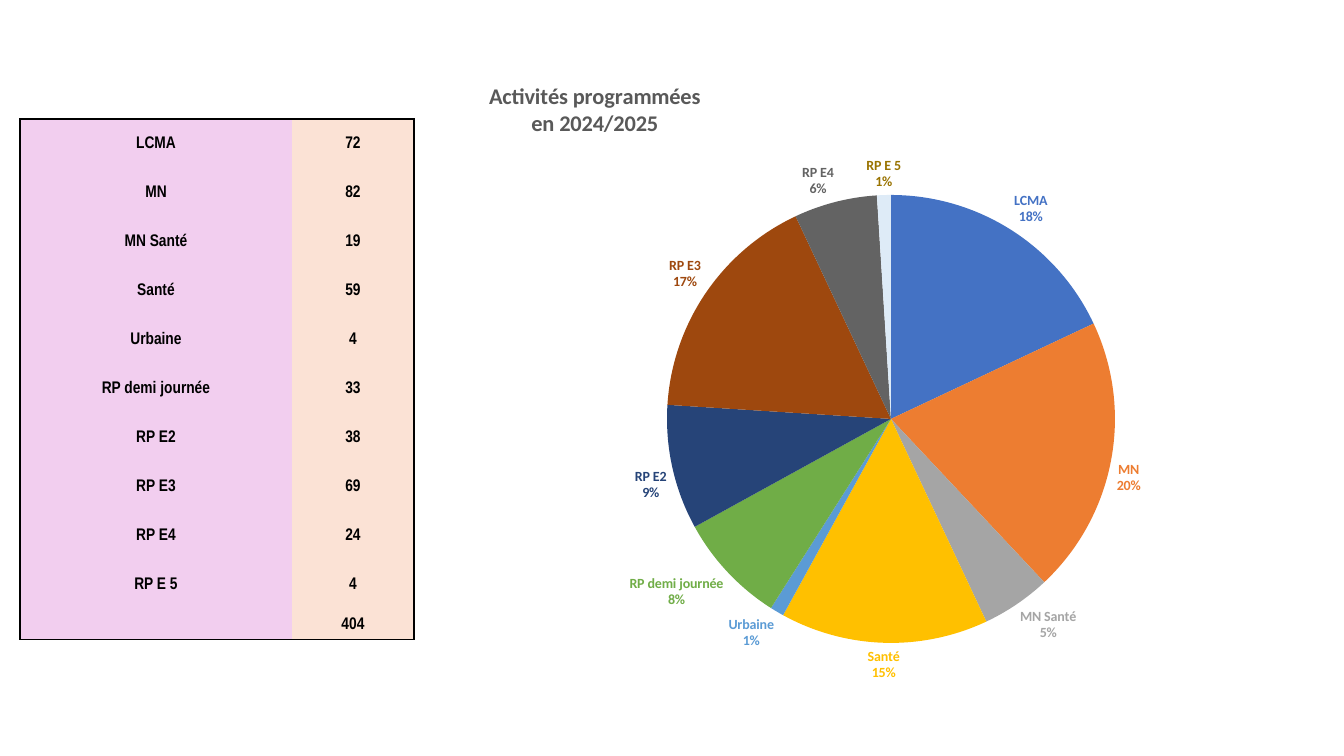
from lxml.etree import SubElement
from pptx import Presentation
from pptx.chart.data import CategoryChartData
from pptx.dml.color import RGBColor
from pptx.enum.chart import XL_CHART_TYPE, XL_LABEL_POSITION
from pptx.enum.text import MSO_ANCHOR, PP_ALIGN
from pptx.oxml import parse_xml
from pptx.oxml.ns import nsdecls, qn
from pptx.util import Emu, Pt

# Content: activity, sessions, share in percent, slice colour, label colour
ACTIVITIES = [
    ("LCMA", 72, 18, "4472C4", "4472C4"),
    ("MN", 82, 20, "ED7D31", "ED7D31"),
    ("MN Santé", 19, 5, "A5A5A5", "A5A5A5"),
    ("Santé", 59, 15, "FFC000", "FFC000"),
    ("Urbaine", 4, 1, "5B9BD5", "5B9BD5"),
    ("RP demi journée", 33, 8, "70AD47", "70AD47"),
    ("RP E2", 38, 9, "264478", "264478"),
    ("RP E3", 69, 17, "9E480E", "9E480E"),
    ("RP E4", 24, 6, "636363", "636363"),
    ("RP E 5", 4, 1, "DEEBF7", "997300"),
]
CHART_TITLE = ["Activités programmées", "en 2024/2025"]
TABLE_ROWS = [(name, str(count)) for name, count, *_ in ACTIVITIES]
TABLE_ROWS.append(("", str(sum(count for _, count, *_ in ACTIVITIES))))

THEME = {
    "column_fills": ["F2CEEF", "FBE2D5"],
    "border": "000000",
    "cell": {"name": "Arial Narrow", "size": Pt(12), "bold": True, "color": "000000"},
    "title": {"name": "Calibri", "size": Pt(16), "bold": True, "color": "595959"},
    "chart": {"name": "Calibri", "size": Pt(10), "color": "000000"},
    "label": {"name": "Calibri", "size": Pt(10), "bold": True},
}

# Geometry in px
SLIDE = (1344, 756)
TABLE = (20, 119)
COLUMN_WIDTHS = (272, 122)
ROW_HEIGHT, TOTAL_HEIGHT = 49, 31
CHART = (468, 61, 812, 633)
PIE = (667, 195, 448, 448)
TITLE = (486, 78)


def px(length):
    return Emu(round(length * 914400 / 100.8))


def style_font(font, values):
    for key, value in values.items():
        if key == "color":
            font.color.rgb = RGBColor.from_string(value)
        else:
            setattr(font, key, value)


def set_borders(cell, drawn_sides):
    properties = cell._tc.get_or_add_tcPr()
    for side in "LRTB":
        line = SubElement(properties, qn(f"a:ln{side}"), w=str(Pt(1)))
        if side in drawn_sides:
            fill = SubElement(line, qn("a:solidFill"))
            SubElement(fill, qn("a:srgbClr"), val=THEME["border"])
        else:
            SubElement(line, qn("a:noFill"))


def manual_layout(left, top, size=None, inner=False):
    """Turn a place on the slide into fractions of the chart area."""
    values = {"xMode": "edge", "yMode": "edge",
              "x": round((left - CHART[0]) / CHART[2], 4),
              "y": round((top - CHART[1]) / CHART[3], 4)}
    if inner:
        values = {"layoutTarget": "inner", **values}
    if size:
        values.update(w=round(size[0] / CHART[2], 4), h=round(size[1] / CHART[3], 4))
    body = "".join(f'<c:{key} val="{value}"/>' for key, value in values.items())
    return parse_xml(f'<c:layout {nsdecls("c")}><c:manualLayout>{body}'
                     "</c:manualLayout></c:layout>")


def add_activity_table(slide):
    heights = [ROW_HEIGHT] * len(ACTIVITIES) + [TOTAL_HEIGHT]
    frame = slide.shapes.add_table(len(TABLE_ROWS), 2, *map(px, TABLE),
                                   px(sum(COLUMN_WIDTHS)), px(sum(heights)))
    table = frame.table
    table.first_row = table.horz_banding = False
    for column, width in zip(table.columns, COLUMN_WIDTHS):
        column.width = px(width)
    for row_index, (texts, height) in enumerate(zip(TABLE_ROWS, heights)):
        table.rows[row_index].height = px(height)
        for column_index, text in enumerate(texts):
            cell = table.cell(row_index, column_index)
            sides = "LR"[column_index]
            sides += "T" if row_index == 0 else ""
            sides += "B" if row_index == len(TABLE_ROWS) - 1 else ""
            set_borders(cell, sides)
            cell.fill.solid()
            cell.fill.fore_color.rgb = RGBColor.from_string(
                THEME["column_fills"][column_index])
            cell_format = {"vertical_anchor": MSO_ANCHOR.MIDDLE, "margin_left": px(1),
                           "margin_right": px(1), "margin_top": px(1), "margin_bottom": 0}
            for key, value in cell_format.items():
                setattr(cell, key, value)
            paragraph = cell.text_frame.paragraphs[0]
            paragraph.alignment = PP_ALIGN.CENTER
            run = paragraph.add_run()
            run.text = text
            style_font(run.font, THEME["cell"])


def add_activity_pie(slide):
    data = CategoryChartData()
    data.categories = [name for name, *_ in ACTIVITIES]
    data.add_series("Series 1", [share for _, _, share, *_ in ACTIVITIES])
    chart = slide.shapes.add_chart(XL_CHART_TYPE.PIE, *map(px, CHART), data).chart
    chart.has_legend = False
    style_font(chart.font, THEME["chart"])

    # Title
    title = chart.chart_title
    title_frame = title.text_frame
    for index, text in enumerate(CHART_TITLE):
        paragraph = title_frame.add_paragraph() if index else title_frame.paragraphs[0]
        paragraph.alignment = PP_ALIGN.CENTER
        run = paragraph.add_run()
        run.text = text
        style_font(run.font, THEME["title"])
    for layout in title._element.findall(qn("c:layout")):
        title._element.remove(layout)
    title._element.find(qn("c:tx")).addnext(manual_layout(*TITLE))

    # Pie position
    plot_area = chart._chartSpace.find(".//" + qn("c:plotArea"))
    for layout in plot_area.findall(qn("c:layout")):
        plot_area.remove(layout)
    plot_area.insert(0, manual_layout(*PIE[:2], PIE[2:], inner=True))

    # Slices and labels
    plot = chart.plots[0]
    plot.vary_by_categories = True
    series = plot.series[0]
    for index, (*_, slice_color, label_color) in enumerate(ACTIVITIES):
        point = series.points[index]
        point.format.fill.solid()
        point.format.fill.fore_color.rgb = RGBColor.from_string(slice_color)
        point.format.line.fill.background()
        style_font(point.data_label.font, {**THEME["label"], "color": label_color})
        point.data_label.position = XL_LABEL_POSITION.OUTSIDE_END
    labels = series.data_labels
    labels.position = XL_LABEL_POSITION.OUTSIDE_END
    shown = {"showVal": "0", "showCatName": "1", "showPercent": "1"}
    for group in [labels._element, *labels._element.findall(qn("c:dLbl"))]:
        for tag, value in shown.items():
            group.find(qn(f"c:{tag}")).set("val", value)
        separator = parse_xml(f'<c:separator {nsdecls("c")}>\n</c:separator>')
        group.find(qn("c:showBubbleSize")).addnext(separator)


def main():
    presentation = Presentation()
    presentation.slide_width, presentation.slide_height = map(px, SLIDE)
    slide = presentation.slides.add_slide(presentation.slide_layouts[6])
    add_activity_pie(slide)
    add_activity_table(slide)
    presentation.save("out.pptx")


if __name__ == "__main__":
    main()
